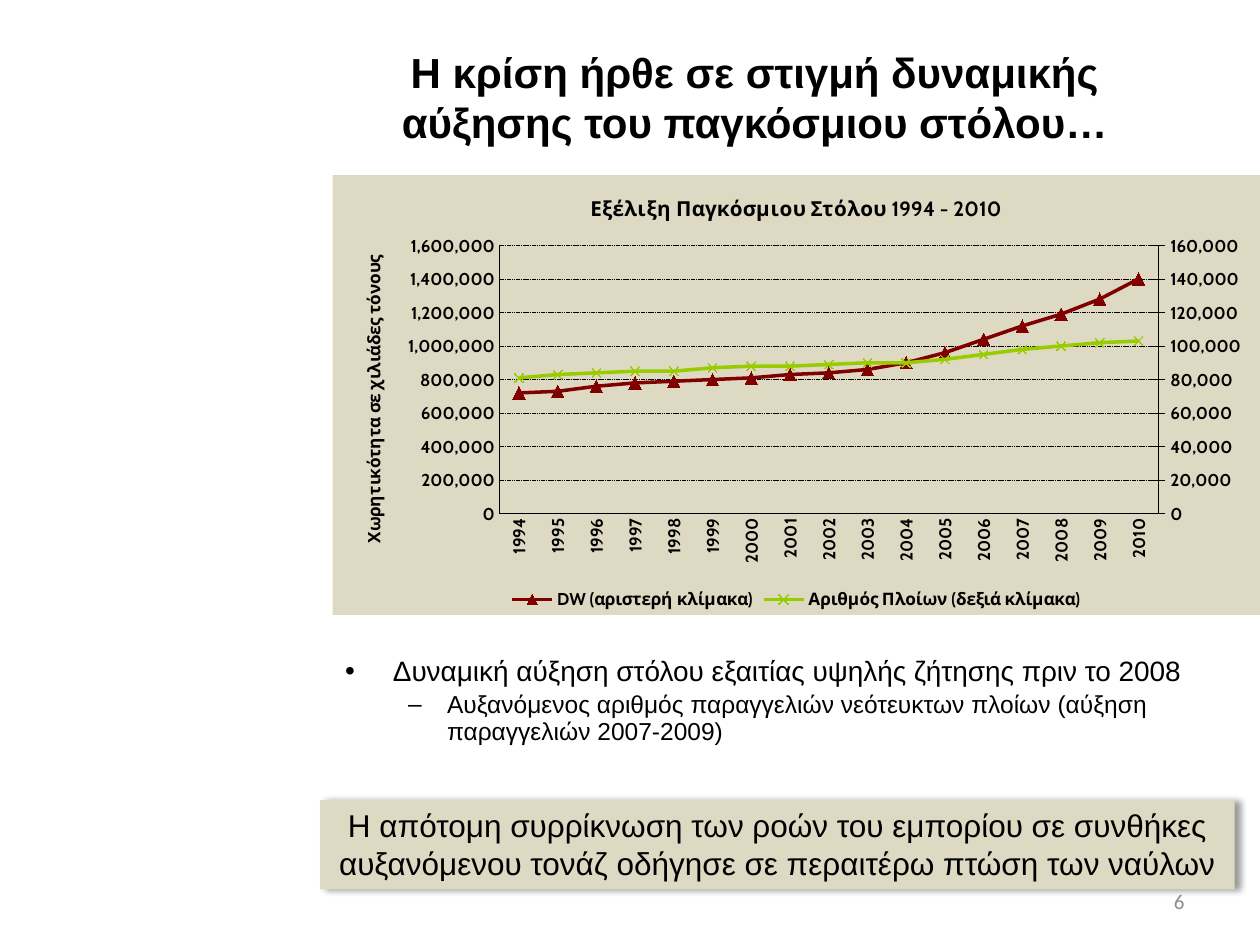
from copy import deepcopy

from pptx import Presentation
from pptx.chart.axis import CategoryAxis, ValueAxis
from pptx.chart.data import CategoryChartData
from pptx.dml.color import RGBColor
from pptx.enum.chart import XL_CHART_TYPE as ChartType
from pptx.enum.chart import XL_LEGEND_POSITION as LegendPosition
from pptx.enum.chart import XL_MARKER_STYLE as Marker
from pptx.enum.chart import XL_TICK_MARK as Tick
from pptx.enum.dml import MSO_LINE as Dash
from pptx.enum.shapes import MSO_SHAPE as ShapeType
from pptx.enum.text import MSO_ANCHOR as Anchor
from pptx.enum.text import PP_ALIGN as Align
from pptx.oxml import parse_xml
from pptx.oxml.ns import nsdecls
from pptx.util import Inches, Pt

BLACK, WHITE, SAND, GREY = "000000", "FFFFFF", "DDD9C3", "8C8C8C"
YEARS = [str(year) for year in range(1994, 2011)]
TONNAGE = [720000, 730000, 760000, 780000, 790000, 800000, 810000, 830000, 840000,
           860000, 900000, 960000, 1040000, 1120000, 1190000, 1280000, 1400000]
SHIPS = [81000, 83000, 84000, 85000, 85000, 87000, 88000, 88000, 89000,
         90000, 90000, 92000, 95000, 98000, 100000, 102000, 103000]
SERIES = [
    ("DW (αριστερή κλίμακα)", TONNAGE, "800000", Marker.TRIANGLE, 7),
    ("Αριθμός Πλοίων (δεξιά κλίμακα)", SHIPS, "99CC00", Marker.X, 5),
]


def rgb(value):
    return RGBColor.from_string(value)


def box(left, top, width, height):
    return [Inches(value) for value in (left, top, width, height)]


def set_values(target, values):
    for name, value in values.items():
        setattr(target, name, value)


def set_font(font, size, name="Arial", color=BLACK, bold=False):
    set_values(font, {"size": Pt(size), "name": name, "bold": bold})
    font.color.rgb = rgb(color)


def set_line(line, color, width):
    line.color.rgb = rgb(color)
    line.width = Pt(width)


def write(shape, text, size, align, anchor=Anchor.TOP, **font):
    frame = shape.text_frame
    set_values(frame, {"text": text, "word_wrap": True, "vertical_anchor": anchor})
    paragraph = frame.paragraphs[0]
    paragraph.alignment = align
    set_font(paragraph.runs[0].font, size, **font)


def add_title(slide, text):
    title = slide.shapes.title
    set_values(title, dict(zip(("left", "top", "width", "height"), box(2.48, 0.3, 7.02, 0.93))))
    title.fill.solid()
    title.fill.fore_color.rgb = rgb(WHITE)
    write(title, text, 24, Align.CENTER, Anchor.MIDDLE, bold=True)


def add_bullets(slide, items):
    frame = slide.shapes.add_textbox(*box(2.64, 5.17, 7.36, 1.1)).text_frame
    frame.word_wrap = True
    for index, (text, level, size, margin, hanging, bullet) in enumerate(items):
        paragraph = frame.add_paragraph() if index else frame.paragraphs[0]
        set_values(paragraph, {"text": text, "level": level, "line_spacing": 0.9,
                               "space_before": Pt(size * 0.2)})
        set_font(paragraph.runs[0].font, size)
        properties = paragraph._p.get_or_add_pPr()
        properties.set("marL", str(Inches(margin)))
        properties.set("indent", str(-Inches(hanging)))
        properties.append(parse_xml(f'<a:buFont {nsdecls("a")} typeface="Arial"/>'))
        properties.append(parse_xml(f'<a:buChar {nsdecls("a")} char="{bullet}"/>'))


def add_callout(slide, text):
    callout = slide.shapes.add_shape(ShapeType.RECTANGLE, *box(2.54, 6.35, 7.26, 0.71))
    callout.fill.solid()
    callout.fill.fore_color.rgb = rgb(SAND)
    callout.line.fill.background()
    callout._element.spPr.append(parse_xml(
        f'<a:effectLst {nsdecls("a")}><a:outerShdw blurRad="{Pt(4)}" dist="{Pt(3)}" dir="0">'
        f'<a:srgbClr val="{BLACK}"><a:alpha val="40000"/></a:srgbClr>'
        '</a:outerShdw></a:effectLst>'))
    write(callout, text, 18, Align.CENTER)


def add_page_number(slide, text):
    number = slide.shapes.add_textbox(*box(7.17, 6.95, 2.33, 0.4))
    write(number, text, 12, Align.RIGHT, Anchor.MIDDLE, name="Calibri", color=GREY)


def set_chart_title(owner, text, size):
    frame = owner.text_frame
    frame.text = text
    set_font(frame.paragraphs[0].runs[0].font, size, "Cabin", bold=True)


def format_axis(axis, tick, width):
    set_values(axis, {"major_tick_mark": tick, "minor_tick_mark": Tick.NONE})
    set_line(axis.format.line, BLACK, width)


def format_value_axis(axis, maximum, tick, width):
    set_values(axis, {"minimum_scale": 0, "maximum_scale": maximum, "major_unit": maximum / 8})
    set_values(axis.tick_labels, {"number_format": "#,##0", "number_format_is_linked": False})
    format_axis(axis, tick, width)


def move_to_right_axis(chart):
    """Give the last series its own line plot and a value axis on the right."""
    left_plot = chart.plots[0]._element
    right_plot = deepcopy(left_plot)
    left_plot.remove(left_plot.xpath("c:ser")[-1])
    right_plot.remove(right_plot.xpath("c:ser")[0])
    left_plot.addnext(right_plot)

    category = deepcopy(chart.category_axis._element)
    value = deepcopy(chart.value_axis._element)
    chart.value_axis._element.addnext(value)
    value.addnext(category)
    category_id, value_id = "50010", "50020"
    for element, own, other in ((category, category_id, value_id), (value, value_id, category_id)):
        element.xpath("c:axId")[0].set("val", own)
        element.xpath("c:crossAx")[0].set("val", other)
    for element, identifier in zip(right_plot.xpath("c:axId"), (category_id, value_id)):
        element.set("val", identifier)
    value.xpath("c:axPos")[0].set("val", "r")
    value.xpath("c:crosses")[0].set("val", "max")

    CategoryAxis(category).visible = False
    right_axis = ValueAxis(value)
    set_values(right_axis, {"has_major_gridlines": False, "has_title": False})
    format_value_axis(right_axis, 160000, Tick.CROSS, 0.25)


def set_plot_layout(chart, **fractions):
    plot_area = chart._chartSpace.chart.plotArea
    for layout in plot_area.xpath("c:layout"):
        plot_area.remove(layout)
    values = "".join(f'<c:{name} val="{value}"/>' for name, value in fractions.items())
    plot_area.insert(0, parse_xml(
        f'<c:layout {nsdecls("c")}><c:manualLayout><c:layoutTarget val="inner"/>'
        f'<c:xMode val="edge"/><c:yMode val="edge"/>{values}</c:manualLayout></c:layout>'))


def add_fleet_chart(slide):
    data = CategoryChartData(number_format="#,##0")
    data.categories = YEARS
    for name, values, *_ in SERIES:
        data.add_series(name, values)
    chart = slide.shapes.add_chart(
        ChartType.LINE_MARKERS, *box(2.64, 1.39, 7.36, 3.49), data).chart
    set_font(chart.font, 9.8, "Cabin", bold=True)
    chart._chartSpace.xpath("c:txPr")[0].addprevious(parse_xml(
        f'<c:spPr {nsdecls("c", "a")}><a:solidFill><a:srgbClr val="{SAND}"/></a:solidFill>'
        '<a:ln><a:noFill/></a:ln></c:spPr>'))

    # Titles and legend
    set_chart_title(chart.chart_title, "Εξέλιξη Παγκόσμιου Στόλου 1994 - 2010", 11.8)
    chart.has_legend = True
    set_values(chart.legend, {"position": LegendPosition.BOTTOM, "include_in_layout": False})

    # Series
    chart.plots[0].vary_by_categories = False
    for series, (_, _, color, style, size) in zip(chart.plots[0].series, SERIES):
        series.smooth = False
        set_line(series.format.line, color, 2)
        set_values(series.marker, {"style": style, "size": size})
        series.marker.format.fill.solid()
        series.marker.format.fill.fore_color.rgb = rgb(color)
        set_line(series.marker.format.line, color, 0.75)

    # Axes
    format_axis(chart.category_axis, Tick.NONE, 1)
    set_font(chart.category_axis.tick_labels.font, 9.8, "Cabin", bold=True)
    chart.category_axis._element.xpath("c:txPr/a:bodyPr")[0].set("rot", "-5400000")
    axis = chart.value_axis
    format_value_axis(axis, 1600000, Tick.NONE, 1)
    set_chart_title(axis.axis_title, "Χωρητικότητα σε χιλιάδες τόνους", 9.8)
    axis.axis_title._element.xpath(".//a:bodyPr")[0].set("rot", "-5400000")
    grid = axis.major_gridlines.format.line
    set_line(grid, BLACK, 0.25)
    grid.dash_style = Dash.SQUARE_DOT
    move_to_right_axis(chart)
    set_plot_layout(chart, x=0.18, y=0.16, w=0.71, h=0.61)


def main():
    presentation = Presentation()
    set_values(presentation, {"slide_width": Inches(10), "slide_height": Inches(7.5)})
    slide = presentation.slides.add_slide(presentation.slide_layouts[5])
    add_title(slide, "Η κρίση ήρθε σε στιγμή δυναμικής αύξησης του παγκόσμιου στόλου…")
    add_bullets(slide, [
        ("Δυναμική αύξηση στόλου εξαιτίας υψηλής ζήτησης πριν το 2008", 0, 16, 0.38, 0.38, "•"),
        ("Aυξανόμενος αριθμός παραγγελιών νεότευκτων πλοίων (αύξηση παραγγελιών 2007-2009)",
         1, 14, 0.81, 0.31, "–"),
    ])
    add_callout(slide, "Η απότομη συρρίκνωση των ροών του εμπορίου σε συνθήκες "
                       "αυξανόμενου τονάζ οδήγησε σε περαιτέρω πτώση των ναύλων")
    add_page_number(slide, "6")
    add_fleet_chart(slide)
    presentation.save("out.pptx")


if __name__ == "__main__":
    main()
